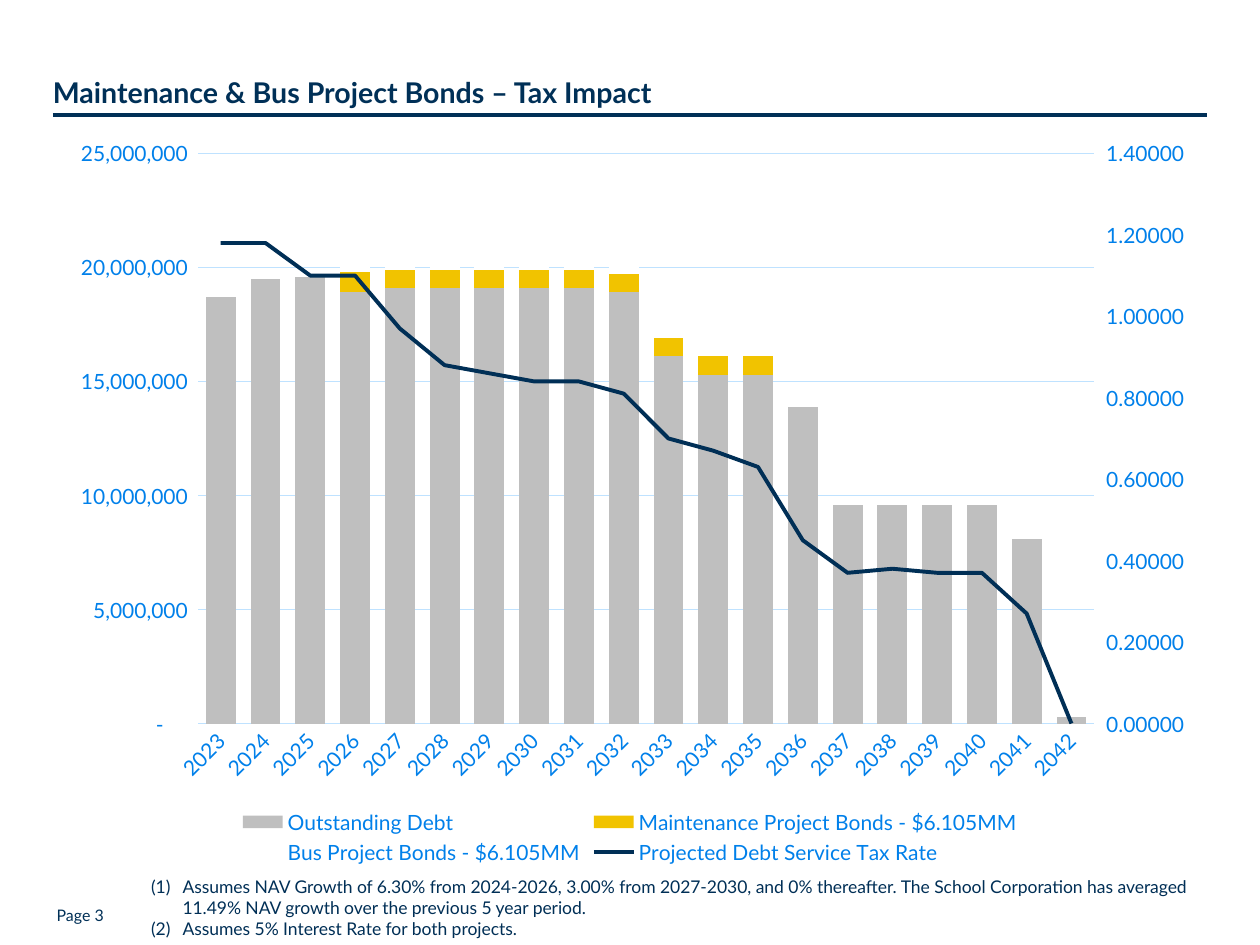
import copy
import dataclasses
import typing

import lxml.etree
import pptx
import pptx.chart.axis
import pptx.chart.data
import pptx.dml.color
import pptx.enum.chart
import pptx.enum.shapes
import pptx.enum.text
import pptx.oxml
import pptx.oxml.ns
import pptx.util

qn = pptx.oxml.ns.qn
Pt = pptx.util.Pt
Tick = pptx.enum.chart.XL_TICK_MARK


@dataclasses.dataclass(frozen=True)
class Theme:
    face: str = "Lato"
    navy: str = "003057"
    ink: str = "002F56"
    blue: str = "0080EA"
    pale: str = "BFE2FF"
    grey: str = "BFBFBF"
    gold: str = "F1C300"
    white: str = "FFFFFF"
    title: float = 16.3
    page: float = 9.1
    note: float = 10
    label: float = 12
    thick: float = 2.25
    thin: float = 0.75


@dataclasses.dataclass(frozen=True)
class Box:
    x: float
    y: float
    w: float
    h: float


@dataclasses.dataclass(frozen=True)
class Label:
    box: Box
    lines: tuple[str, ...]
    size: float
    color: str
    bold: bool = False
    inset: float = 0
    low: bool = False
    listed: bool = False


@dataclasses.dataclass(frozen=True)
class Row:
    name: str
    vals: list[typing.Optional[float]]
    color: str


LOOK = Theme()
WIDE, HIGH = pptx.util.Inches(10), pptx.util.Inches(7.5)
COL, ROW = WIDE / 100, HIGH / 100
RULE = Box(4.2, 12.13, 91.6, 0)
CHART = Box(4.2, 13.33, 91.6, 78.67)
PLOT = Box(0.126, 0.037, 0.776, 0.767)
LABELS = [
    Label(Box(4.5, 95.2, 10.7, 3.33), ("Page 3",), LOOK.page, LOOK.navy),
    Label(Box(4.2, 4.8, 91.6, 7.47),
          ("Maintenance & Bus Project Bonds – Tax Impact",),
          LOOK.title, LOOK.navy, bold=True, low=True),
    Label(Box(11, 92, 84.8, 8.13),
          ("Assumes NAV Growth of 6.30% from 2024-2026, 3.00% from 2027-2030, "
           "and 0% thereafter. The School Corporation has averaged 11.49% NAV "
           "growth over the previous 5 year period.",
           "Assumes 5% Interest Rate for both projects."),
          LOOK.note, LOOK.ink, inset=0.1, listed=True),
]
YEARS = [str(year) for year in range(2023, 2043)]
DEBT = [18.7, 19.5, 19.6, 18.9] + [19.1] * 5 + [18.9, 16.1, 15.3, 15.3, 13.9]
DEBT += [9.6] * 4 + [8.1, 0.3]
BONDS = [None] * 3 + [900000] + [800000] * 9 + [None] * 7
RATES = [1.18, 1.18, 1.1, 1.1, 0.97, 0.88, 0.86, 0.84, 0.84, 0.81,
         0.7, 0.67, 0.63, 0.45, 0.37, 0.38, 0.37, 0.37, 0.27, 0]
ROWS = [
    Row("Outstanding Debt", [round(v * 1000000) for v in DEBT], LOOK.grey),
    Row("Maintenance Project Bonds - $6.105MM", BONDS, LOOK.gold),
    Row("Bus Project Bonds - $6.105MM", BONDS, LOOK.white),
    Row("Projected Debt Service Tax Rate", RATES, LOOK.ink),
]
MONEY = '_(* #,##0_);_(* \\(#,##0\\);_(* "-"??_);_('


def place(box: Box) -> tuple[int, int, int, int]:
    return (round(box.x * COL), round(box.y * ROW),
            round(box.w * COL), round(box.h * ROW))


def rgb(color: str) -> pptx.dml.color.RGBColor:
    return pptx.dml.color.RGBColor.from_string(color)


def style(font, size: float, color: str, bold: bool = False) -> None:
    font.name, font.size, font.bold = LOOK.face, Pt(size), bold
    font.color.rgb = rgb(color)


def stroke(line, color: str, width: float) -> None:
    line.color.rgb, line.width = rgb(color), Pt(width)


def add(parent, tag: str, **attrs: str):
    node = lxml.etree.SubElement(parent, qn(tag))
    for key, val in attrs.items():
        node.set(key, val)
    return node


def write(slide, label: Label) -> None:
    frame = slide.shapes.add_textbox(*place(label.box)).text_frame
    frame.word_wrap = True
    frame.margin_left = pptx.util.Inches(label.inset)
    if label.low:
        frame.vertical_anchor = pptx.enum.text.MSO_ANCHOR.BOTTOM
    frame.text = "\n".join(label.lines)
    for para in frame.paragraphs:
        if label.low:
            para.line_spacing = 0.9
        if label.listed:
            props = para._p.get_or_add_pPr()
            indent = pptx.util.Inches(0.25)
            props.set("marL", str(indent))
            props.set("indent", str(-indent))
            add(props, "a:buFont", typeface="+mj-lt")
            add(props, "a:buAutoNum", type="arabicParenBoth")
        for run in para.runs:
            style(run.font, label.size, label.color, label.bold)


def rule(slide, box: Box) -> None:
    x, y, w, h = place(box)
    kind = pptx.enum.shapes.MSO_CONNECTOR.STRAIGHT
    line = slide.shapes.add_connector(kind, x, y, x + w, y + h)
    stroke(line.line, LOOK.navy, LOOK.thick)
    add(line._element.spPr, "a:effectLst")


def dress(axis, tick=Tick.NONE) -> None:
    axis.major_tick_mark, axis.minor_tick_mark = tick, Tick.NONE
    style(axis.tick_labels.font, LOOK.label, LOOK.blue)


def scale(axis, top: float, step: float, form: str) -> None:
    axis.minimum_scale, axis.maximum_scale = 0, top
    axis.major_unit = step
    axis.tick_labels.number_format = form
    axis.tick_labels.number_format_is_linked = False
    axis.format.line.fill.background()


def pin(area, box: Box) -> None:
    node = area.find(qn("c:layout"))
    if node is None:
        node = pptx.oxml.parse_xml(f"<c:layout {pptx.oxml.ns.nsdecls('c')}/>")
        area.insert(0, node)
    man = add(node, "c:manualLayout")
    add(man, "c:layoutTarget", val="inner")
    for key in ("x", "y"):
        add(man, f"c:{key}Mode", val="edge")
    for key, val in dataclasses.asdict(box).items():
        add(man, f"c:{key}", val=str(val))


def split(chart) -> None:
    area = chart._chartSpace.chart.plotArea
    bars = area.find(qn("c:barChart"))
    rate = bars.findall(qn("c:ser"))[-1]
    flag = rate.find(qn("c:invertIfNegative"))
    if flag is not None:
        rate.remove(flag)
    line = pptx.oxml.parse_xml(f"<c:lineChart {pptx.oxml.ns.nsdecls('c')}/>")
    add(line, "c:grouping", val="standard")
    add(line, "c:varyColors", val="0")
    line.append(rate)
    add(line, "c:marker", val="1")
    bars.addnext(line)
    cat, val = (copy.deepcopy(axis._element)
                for axis in (chart.category_axis, chart.value_axis))
    for node, own, other in ((cat, "501", "502"), (val, "502", "501")):
        add(line, "c:axId", val=own)
        node.find(qn("c:axId")).set("val", own)
        node.find(qn("c:crossAx")).set("val", other)
    chart.value_axis._element.addnext(val)
    val.addnext(cat)
    val.find(qn("c:axPos")).set("val", "r")
    val.find(qn("c:crosses")).set("val", "max")
    pptx.chart.axis.CategoryAxis(cat).visible = False
    right = pptx.chart.axis.ValueAxis(val)
    right.has_major_gridlines = False
    dress(right, Tick.OUTSIDE)
    scale(right, 1.4, 0.2, "0.00000")


def graph(slide) -> None:
    data = pptx.chart.data.CategoryChartData()
    data.categories = YEARS
    for row in ROWS:
        data.add_series(row.name, row.vals)
    kind = pptx.enum.chart.XL_CHART_TYPE.COLUMN_STACKED
    chart = slide.shapes.add_chart(kind, *place(CHART), data).chart
    style(chart.font, LOOK.label, LOOK.ink)
    chart.has_title = False
    chart.has_legend = True
    chart.legend.position = pptx.enum.chart.XL_LEGEND_POSITION.BOTTOM
    chart.legend.include_in_layout = False
    style(chart.legend.font, LOOK.label, LOOK.blue)
    base, left = chart.category_axis, chart.value_axis
    dress(base)
    stroke(base.format.line, LOOK.pale, LOOK.thin)
    base._element.find(qn("c:txPr")).find(qn("a:bodyPr")).set("rot", "-2700000")
    dress(left)
    scale(left, 25000000, 5000000, MONEY)
    stroke(left.major_gridlines.format.line, LOOK.pale, LOOK.thin)
    split(chart)
    pin(chart._chartSpace.chart.plotArea, PLOT)
    bars, line = chart.plots
    bars.gap_width, bars.overlap = 50, 100
    bars.vary_by_categories = False
    for series, row in zip(bars.series, ROWS):
        series.format.fill.solid()
        series.format.fill.fore_color.rgb = rgb(row.color)
    rate = line.series[0]
    stroke(rate.format.line, ROWS[-1].color, LOOK.thick)
    rate.marker.style = pptx.enum.chart.XL_MARKER_STYLE.NONE
    rate.smooth = False


def main() -> None:
    deck = pptx.Presentation()
    deck.slide_width, deck.slide_height = WIDE, HIGH
    slide = deck.slides.add_slide(deck.slide_layouts[6])
    rule(slide, RULE)
    for label in LABELS:
        write(slide, label)
    graph(slide)
    deck.save("out.pptx")


if __name__ == "__main__":
    main()
